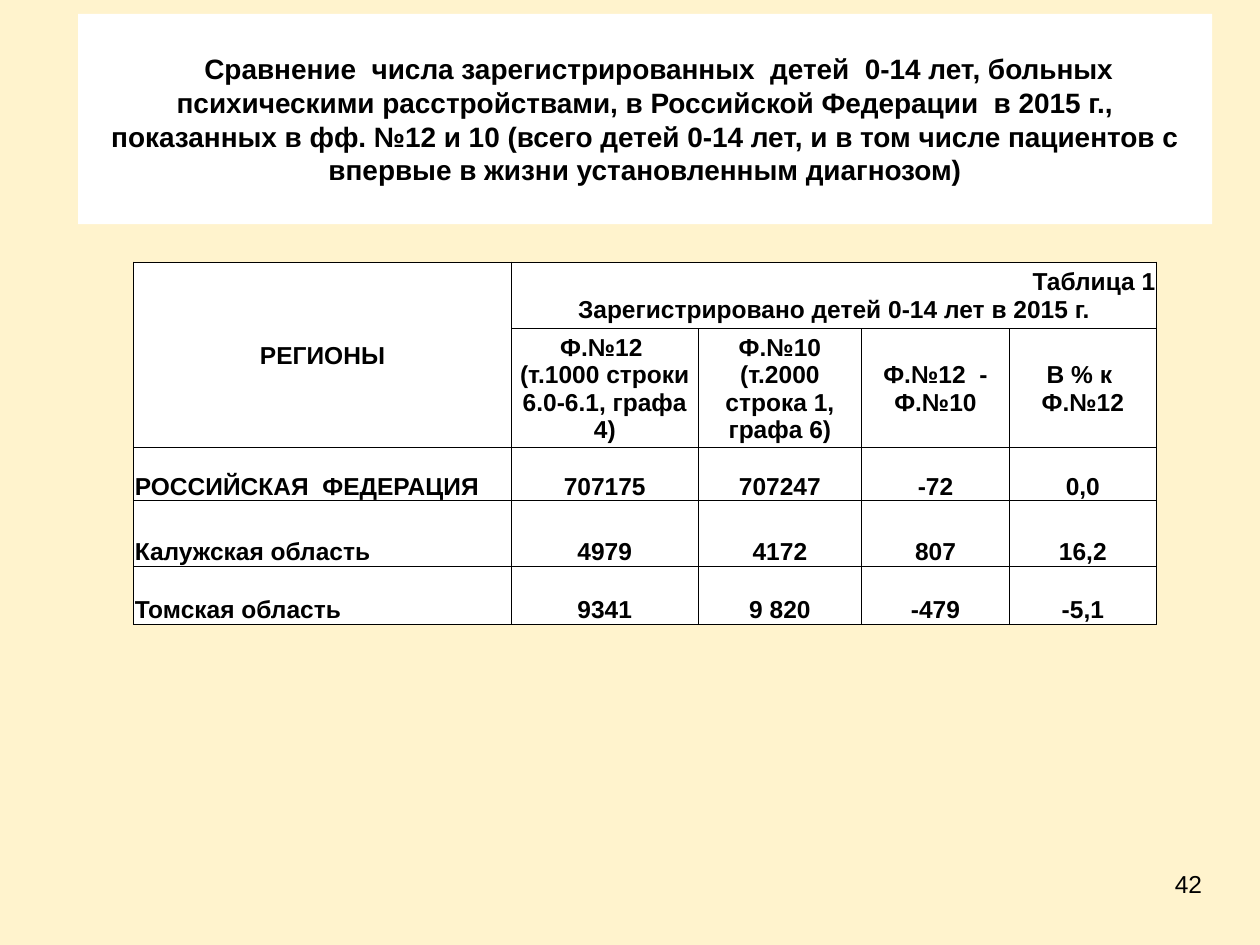
from lxml import etree
from pptx import Presentation
from pptx.dml.color import RGBColor
from pptx.enum import text
from pptx.oxml.ns import qn
from pptx.util import Inches, Pt

LEFT, MID, RIGHT = text.PP_ALIGN.LEFT, text.PP_ALIGN.CENTER, text.PP_ALIGN.RIGHT
INK, PAPER, CREAM = "000000", "FFFFFF", "FFF3CD"

HEADS = [
    ["Ф.№12 ", "(т.1000 строки 6.0-6.1, графа 4)"],
    ["Ф.№10", "(т.2000 строка 1, графа 6)"],
    ["Ф.№12  -", "Ф.№10"],
    ["В % к ", "Ф.№12"],
]
ROWS = [
    ["РОССИЙСКАЯ  ФЕДЕРАЦИЯ", "707175", "707247", "-72", "0,0"],
    ["Калужская область", "4979", "4172", "807", "16,2"],
    ["Томская область", "9341", "9 820", "-479", "-5,1"],
]


def paint(fill, color):
    fill.solid()
    fill.fore_color.rgb = RGBColor.from_string(color)


def write(frame, lines, size=14, bold=True):
    """Fill a text frame with (words, alignment) pairs, one a paragraph."""
    for i, (words, align) in enumerate(lines):
        para = frame.paragraphs[0] if i == 0 else frame.add_paragraph()
        para.alignment = align
        run = para.add_run()
        run.text = words
        run.font.name = "Arial"
        run.font.size = Pt(size)
        run.font.bold = bold
        run.font.color.rgb = RGBColor.from_string(INK)


def place(shape, box):
    shape.left, shape.top, shape.width, shape.height = map(Inches, box)


def add_title(slide, box):
    title = slide.shapes.title
    place(title, box)
    paint(title.fill, PAPER)
    frame = title.text_frame
    frame.auto_size = text.MSO_AUTO_SIZE.NONE
    frame.word_wrap = True
    frame.vertical_anchor = text.MSO_ANCHOR.MIDDLE
    write(frame, [(
        "Сравнение  числа зарегистрированных  детей  0-14 лет, больных "
        "психическими расстройствами, в Российской Федерации  в 2015 г., "
        "показанных в фф. №12 и 10 (всего детей 0-14 лет, и в том числе "
        "пациентов с впервые в жизни установленным диагнозом)", MID)], 16)
    # First-line indent
    props = frame.paragraphs[0]._p.get_or_add_pPr()
    props.set("marL", "0")
    props.set("indent", str(Inches(0.22)))


def edge(cell):
    props = cell._tc.get_or_add_tcPr()
    for i, side in enumerate(("lnL", "lnR", "lnT", "lnB")):
        line = etree.Element(qn(f"a:{side}"), w=str(Pt(0.5)))
        fill = etree.SubElement(line, qn("a:solidFill"))
        etree.SubElement(fill, qn("a:srgbClr"), val=INK)
        props.insert(i, line)


def fill_cell(cell, lines, anchor=text.MSO_ANCHOR.MIDDLE):
    cell.vertical_anchor = anchor
    write(cell.text_frame, lines)


def add_table(slide, box, widths, heights):
    table = slide.shapes.add_table(
        len(heights), len(widths), *map(Inches, box)).table
    for col, width in zip(table.columns, widths):
        col.width = Inches(width)
    for row, height in zip(table.rows, heights):
        row.height = Inches(height)
    for cell in table.iter_cells():
        paint(cell.fill, PAPER)
        edge(cell)
        cell.margin_left = cell.margin_right = cell.margin_top = Inches(0.01)
        cell.margin_bottom = 0

    # Header rows
    table.cell(0, 0).merge(table.cell(1, 0))
    table.cell(0, 1).merge(table.cell(0, len(widths) - 1))
    fill_cell(table.cell(0, 0), [("РЕГИОНЫ", MID)])
    fill_cell(table.cell(0, 1), [
        ("Таблица 1", RIGHT),
        ("Зарегистрировано детей 0-14 лет в 2015 г.", MID)])
    for c, head in enumerate(HEADS, 1):
        fill_cell(table.cell(1, c), [(words, MID) for words in head])

    # Regions
    for r, row in enumerate(ROWS, 2):
        for c, words in enumerate(row):
            fill_cell(table.cell(r, c), [(words, MID if c else LEFT)],
                      text.MSO_ANCHOR.BOTTOM)


def add_number(slide, box):
    frame = slide.shapes.add_textbox(*map(Inches, box)).text_frame
    frame.word_wrap = True
    write(frame, [("42", RIGHT)], bold=False)


def main():
    deck = Presentation()
    deck.slide_width, deck.slide_height = Inches(10), Inches(7.5)
    slide = deck.slides.add_slide(deck.slide_layouts[5])
    paint(slide.background.fill, CREAM)
    add_title(slide, (0.62, 0.11, 9, 1.67))
    add_number(slide, (7.31, 6.85, 2.33, 0.52))
    add_table(slide, (1.06, 2.08, 8.12, 2.78),
              (3, 1.48, 1.3, 1.17, 1.17), (0.53, 0.85, 0.42, 0.52, 0.46))
    deck.save("out.pptx")


if __name__ == "__main__":
    main()
